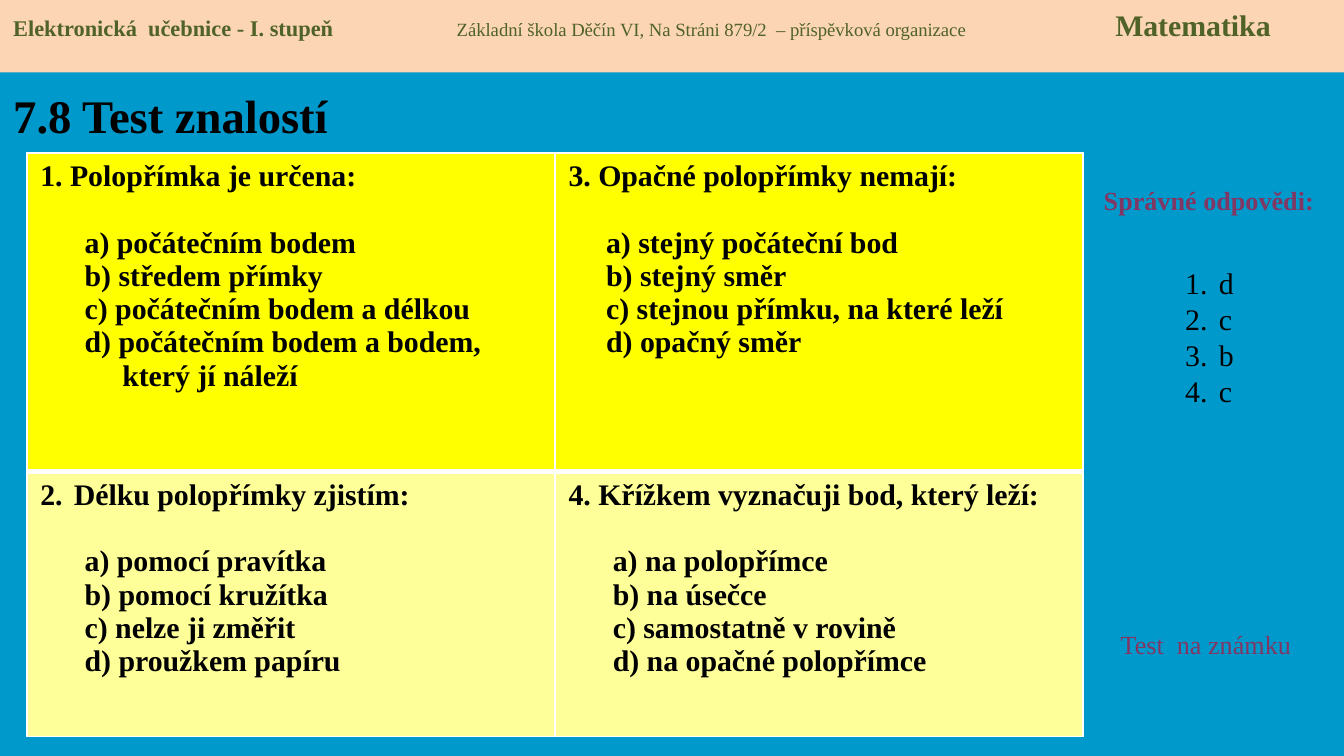
from lxml import etree
from pptx import Presentation
from pptx.dml.color import RGBColor
from pptx.enum.shapes import MSO_SHAPE
from pptx.enum.text import MSO_ANCHOR, PP_ALIGN
from pptx.oxml.ns import qn
from pptx.util import Inches, Pt

RECT = MSO_SHAPE.RECTANGLE
TOP, MIDDLE = MSO_ANCHOR.TOP, MSO_ANCHOR.MIDDLE
LEFT, CENTER = PP_ALIGN.LEFT, PP_ALIGN.CENTER
BLACK, WHITE, GREEN, PLUM = "000000", "FFFFFF", "4F6228", "813763"

# Each cell: question, automatic number, answer indent, answers
QUESTIONS = [
    [("1. Polopřímka je určena:", None, 0.33,
      ["a) počátečním bodem", "b) středem přímky",
       "c) počátečním bodem a délkou", "d) počátečním bodem a bodem,",
       "který jí náleží"]),
     ("3. Opačné polopřímky nemají:", None, 0.28,
      ["a) stejný počáteční bod", "b) stejný směr",
       "c) stejnou přímku, na které leží", "d) opačný směr"])],
    [("Délku polopřímky zjistím:", 2, 0.33,
      ["a) pomocí pravítka", "b) pomocí kružítka", "c) nelze ji změřit",
       "d) proužkem papíru"]),
     ("4. Křížkem vyznačuji bod, který leží:", None, 0.33,
      ["a) na polopřímce", "b) na úsečce", "c) samostatně v rovině",
       "d) na opačné polopřímce"])],
]
ROW_FILLS = ["FFFF00", "FFFF99"]


def rgb(value):
    return RGBColor.from_string(value)


def add_text(p, text, size=16, color=BLACK, bold=False):
    r = p.add_run()
    r.text = text
    r.font.name = "Times New Roman"
    r.font.size = Pt(size)
    r.font.bold = bold
    r.font.color.rgb = rgb(color)


def next_paragraph(tf):
    """Return the empty first paragraph, or a new one."""
    return tf.add_paragraph() if tf.paragraphs[0].runs else tf.paragraphs[0]


def indent(p, left, hanging=0):
    pPr = p._p.get_or_add_pPr()
    pPr.set("marL", str(Inches(left)))
    pPr.set("indent", str(Inches(-hanging)))


def number(p, start=1):
    indent(p, 0.25, 0.25)
    bullet = etree.SubElement(p._p.get_or_add_pPr(), qn("a:buAutoNum"), type="arabicPeriod")
    if start > 1:
        bullet.set("startAt", str(start))


def set_tabs(p, stops):
    tabs = etree.SubElement(p._p.get_or_add_pPr(), qn("a:tabLst"))
    for stop in stops:
        etree.SubElement(tabs, qn("a:tab"), pos=str(Inches(stop)), algn="l")


def set_borders(cell, **widths):
    tcPr = cell._tc.get_or_add_tcPr()
    for i, side in enumerate("LRTB"):
        ln = etree.Element(qn(f"a:ln{side}"), w=str(Pt(widths.get(side, 1))))
        fill = etree.SubElement(ln, qn("a:solidFill"))
        etree.SubElement(fill, qn("a:srgbClr"), val=WHITE)
        tcPr.insert(i, ln)


class TestSlide:
    def __init__(self, prs, background):
        self.slide = prs.slides.add_slide(prs.slide_layouts[6])
        fill = self.slide.background.fill
        fill.solid()
        fill.fore_color.rgb = rgb(background)

    def text_box(self, at, anchor=TOP):
        tf = self.slide.shapes.add_textbox(*map(Inches, at)).text_frame
        tf.word_wrap = True
        tf.vertical_anchor = anchor
        return tf

    def label(self, at, text, align=LEFT, anchor=TOP, **style):
        p = self.text_box(at, anchor).paragraphs[0]
        p.alignment = align
        add_text(p, text, **style)

    def header(self, at, color, parts, stops):
        sp = self.slide.shapes.add_shape(RECT, *map(Inches, at))
        sp.shadow.inherit = False
        sp.fill.solid()
        sp.fill.fore_color.rgb = rgb(color)
        sp.line.fill.background()
        tf = sp.text_frame
        tf.word_wrap = True
        tf.vertical_anchor = TOP
        p = tf.paragraphs[0]
        p.alignment = LEFT
        set_tabs(p, stops)
        for i, (text, size, bold) in enumerate(parts):
            add_text(p, "\t" * (i > 0) + text, size, GREEN, bold)

    def numbered_list(self, at, items, margin_top):
        tf = self.text_box(at)
        tf.margin_top = Inches(margin_top)
        for item in items:
            p = next_paragraph(tf)
            number(p)
            add_text(p, item)

    def question(self, cell, text, start, left, answers):
        tf = cell.text_frame
        p = next_paragraph(tf)
        if start:
            number(p, start)
        add_text(p, text, bold=True)
        for i, answer in enumerate(answers):
            p = next_paragraph(tf)
            lettered = answer[1] == ")"
            indent(p, left if lettered else left + 0.28)
            if i == 0:
                p.space_before = Pt(18)
            add_text(p, answer, bold=True)

    def question_table(self, at, heights):
        table = self.slide.shapes.add_table(2, 2, *map(Inches, at)).table
        for r, row in enumerate(QUESTIONS):
            table.rows[r].height = Inches(heights[r])
            for c, content in enumerate(row):
                cell = table.cell(r, c)
                cell.fill.solid()
                cell.fill.fore_color.rgb = rgb(ROW_FILLS[r])
                set_borders(cell, **({"B": 3} if r == 0 else {"T": 3}))
                self.question(cell, *content)


def main():
    prs = Presentation()
    prs.slide_width, prs.slide_height = Inches(10), Inches(10 * 9 / 16)
    s = TestSlide(prs, "0099CC")
    s.label((0, 0.53, 3.19, 0.65), "7.8 Test znalostí", anchor=MIDDLE, size=25, bold=True)
    s.label((8.05, 1.32, 1.89, 0.34), "Správné odpovědi:", align=CENTER,
            size=14, color=PLUM, bold=True)
    s.question_table((0.2, 1.14, 7.86, 4.34), (2.37, 1.97))
    s.numbered_list((8.72, 1.65, 0.55, 1.99), ["d", "c", "b", "c"], margin_top=0.32)
    s.label((8.24, 4.63, 1.57, 0.34), "Test  na známku", size=14, color=PLUM)
    s.header((0, 0, 10, 0.54), "FCD5B5",
             [("Elektronická  učebnice - I. stupeň", 12, True),
              ("Základní škola Děčín VI, Na Stráni 879/2  – příspěvková organizace", 10, False),
              ("Matematika", 16, True)],
             stops=(3.3, 8.2))
    prs.save("out.pptx")


if __name__ == "__main__":
    main()
